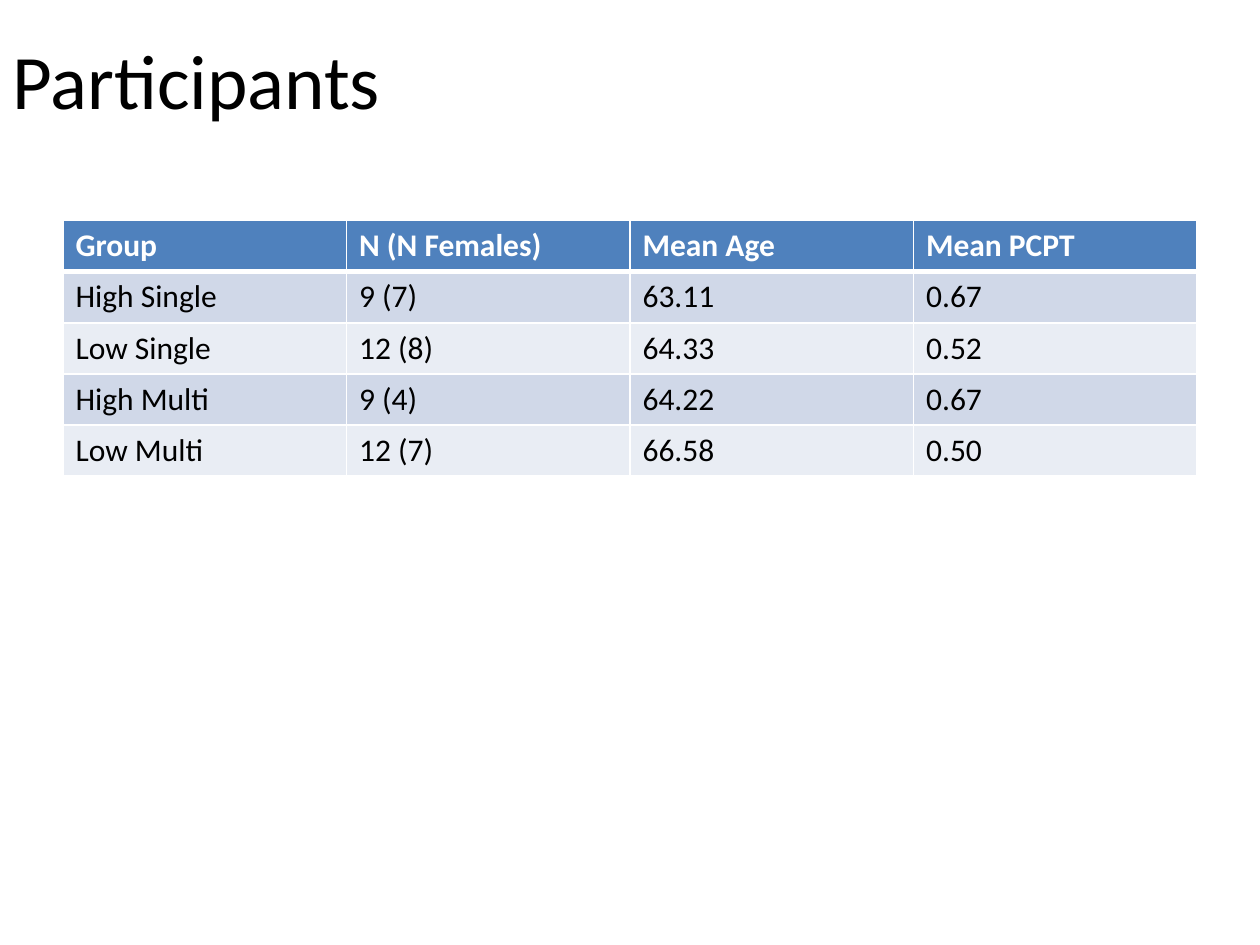
from lxml.etree import SubElement
from pptx import Presentation
from pptx.dml.color import RGBColor
from pptx.enum.text import MSO_ANCHOR as Anchor
from pptx.oxml.ns import qn
from pptx.util import Inches, Pt

FONT = "Calibri"
WHITE, BLACK = "FFFFFF", "000000"
HEADER_FILL = "4F81BD"
BAND_FILLS = ("D0D8E8", "E9EDF4")

PARTICIPANTS = [
    ("Group", "N (N Females)", "Mean Age", "Mean PCPT"),
    ("High Single", "9 (7)", "63.11", "0.67"),
    ("Low Single", "12 (8)", "64.33", "0.52"),
    ("High Multi", "9 (4)", "64.22", "0.67"),
    ("Low Multi", "12 (7)", "66.58", "0.50"),
]


def paint(color_format, hex_color):
    color_format.rgb = RGBColor.from_string(hex_color)


def write(frame, text, size=18, color=BLACK, bold=False):
    run = frame.paragraphs[0].add_run()
    run.text = text
    run.font.name = FONT
    run.font.size = Pt(size)
    run.font.bold = bold
    paint(run.font.color, color)


def set_borders(cell, **widths):
    """Draw white cell borders; widths in points, keyed L, R, T, B."""
    properties = cell._tc.get_or_add_tcPr()
    for side, width in widths.items():
        line = SubElement(properties, qn(f"a:ln{side}"), w=str(Pt(width)))
        fill = SubElement(line, qn("a:solidFill"))
        SubElement(fill, qn("a:srgbClr"), val=WHITE)


def add_title(slide, text, left, top, width, height):
    title = slide.shapes.add_textbox(left, top, width, height).text_frame
    title.word_wrap = True
    title.vertical_anchor = Anchor.MIDDLE
    write(title, text, size=44)


def add_participant_table(slide, rows, left, top, width, height):
    table = slide.shapes.add_table(
        len(rows), len(rows[0]), left, top, width, height).table
    for r, values in enumerate(rows):
        header = r == 0
        for c, value in enumerate(values):
            cell = table.cell(r, c)
            set_borders(cell, L=1, R=1, T=3 if r == 1 else 1, B=3 if header else 1)
            cell.fill.solid()
            paint(cell.fill.fore_color,
                  HEADER_FILL if header else BAND_FILLS[(r - 1) % 2])
            write(cell.text_frame, value,
                  color=WHITE if header else BLACK, bold=header)


def main():
    deck = Presentation()
    deck.slide_width, deck.slide_height = Inches(10), Inches(7.5)
    slide = deck.slides.add_slide(deck.slide_layouts[6])
    add_title(slide, "Participants",
              Inches(0), Inches(0), Inches(9), Inches(1.25))
    add_participant_table(slide, PARTICIPANTS,
                          Inches(0.5), Inches(1.75), Inches(9), Inches(2.03))
    deck.save("out.pptx")


if __name__ == "__main__":
    main()
